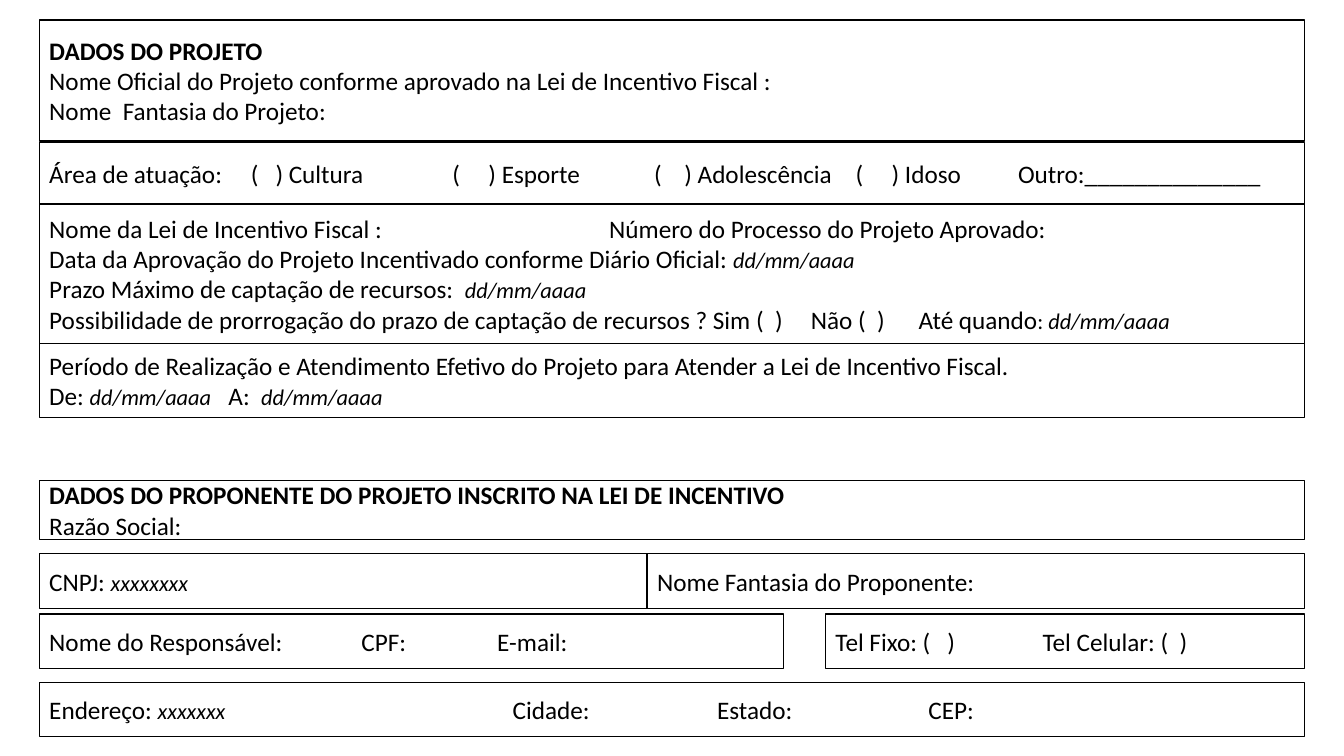
from lxml import etree
from pptx import Presentation
from pptx.dml.color import RGBColor
from pptx.enum import shapes, text
from pptx.oxml import ns
from pptx.util import Pt

BLACK = RGBColor(0x00, 0x00, 0x00)
FONT = "Calibri"
PLAIN = (18, False, False)
BOLD = (18, True, False)
SMALL = (16, False, False)
HINT = (16, False, True)
DATE = ("dd/mm/aaaa", HINT)


def set_tabs(p, stops):
    tab_list = etree.SubElement(p._p.get_or_add_pPr(), ns.qn("a:tabLst"))
    for stop in stops:
        etree.SubElement(tab_list, ns.qn("a:tab"), pos=str(Pt(stop)), algn="l")


def add_field_box(s, left, top, width, height, lines, tabs=()):
    sp = s.shapes.add_shape(shapes.MSO_SHAPE.RECTANGLE,
                            Pt(left), Pt(top), Pt(width), Pt(height))
    sp.shadow.inherit = False
    sp.fill.background()
    sp.line.color.rgb = BLACK
    sp.line.width = Pt(1)
    tf = sp.text_frame
    tf.word_wrap = True
    tf.vertical_anchor = text.MSO_ANCHOR.MIDDLE
    for i, line in enumerate(lines):
        p = tf.add_paragraph() if i else tf.paragraphs[0]
        p.alignment = text.PP_ALIGN.LEFT
        if tabs:
            set_tabs(p, tabs)
        for content, (size, bold, italic) in line:
            r = p.add_run()
            r.text = content
            r.font.name = FONT
            r.font.size = Pt(size)
            r.font.bold = bold
            r.font.italic = italic
            r.font.color.rgb = BLACK


def add_project_section(s, left, top, width):
    add_field_box(s, left, top, width, 86.4, [
        [("DADOS DO PROJETO", BOLD)],
        [("Nome Oficial do Projeto conforme aprovado na Lei de Incentivo Fiscal :", PLAIN)],
        [("Nome  Fantasia do Projeto:", PLAIN)],
    ])
    add_field_box(s, left, top + 87.6, width, 44, [
        [("Área de atuação:\t(   ) Cultura\t(     ) Esporte\t(    ) Adolescência"
          "\t(     ) Idoso\tOutro:______________", PLAIN)],
    ], tabs=(144, 288, 432, 576, 692))
    add_field_box(s, left, top + 131.2, width, 100, [
        [("Nome da Lei de Incentivo Fiscal :\tNúmero do Processo do Projeto Aprovado:", PLAIN)],
        [("Data da Aprovação do Projeto Incentivado conforme Diário Oficial: ", PLAIN), DATE],
        [("Prazo Máximo de captação de recursos:  ", PLAIN), DATE],
        [("Possibilidade de prorrogação do prazo de captação de recursos ? "
          "Sim (  )\tNão (  )\tAté quando", PLAIN), (": ", SMALL), DATE],
    ], tabs=(400, 544, 621))
    add_field_box(s, left, top + 231.2, width, 52.6, [
        [("Período de Realização e Atendimento Efetivo do Projeto para Atender "
          "a Lei de Incentivo Fiscal.", PLAIN)],
        [("De: ", PLAIN), DATE, ("\tA:  ", PLAIN), DATE],
    ], tabs=(128,))


def add_proponent_section(s, left, top, width):
    row_height = 38.9
    right = left + width
    add_field_box(s, left, top, width, 41.8, [
        [("DADOS DO PROPONENTE DO PROJETO INSCRITO NA LEI DE INCENTIVO", BOLD)],
        [("Razão Social:", PLAIN)],
    ])

    id_top, id_width = top + 52.2, 434.2
    add_field_box(s, left, id_top, id_width, row_height,
                  [[("CNPJ: ", PLAIN), ("xxxxxxxx", HINT)]])
    add_field_box(s, left + id_width, id_top, width - id_width, row_height,
                  [[("Nome Fantasia do Proponente:", PLAIN)]])

    contact_top, phone_width = top + 95.1, 342
    add_field_box(s, left, contact_top, 531.4, row_height,
                  [[("Nome do Responsável:\tCPF:\tE-mail:", PLAIN)]],
                  tabs=(223, 320))
    add_field_box(s, right - phone_width, contact_top, phone_width, row_height,
                  [[("Tel Fixo: (   )\tTel Celular: (  )", PLAIN)]],
                  tabs=(148,))

    add_field_box(s, left, top + 144, width, row_height,
                  [[("Endereço: ", PLAIN), ("xxxxxxx", HINT),
                    ("\tCidade:\tEstado:\tCEP:", PLAIN)]],
                  tabs=(331, 477, 628))


def main():
    prs = Presentation()
    prs.slide_width, prs.slide_height = Pt(960), Pt(540)
    s = prs.slides.add_slide(prs.slide_layouts[6])
    left, width = 28.1, 903.6
    add_project_section(s, left, 14.4, width)
    add_proponent_section(s, left, 343.4, width)
    prs.save("out.pptx")


if __name__ == "__main__":
    main()
